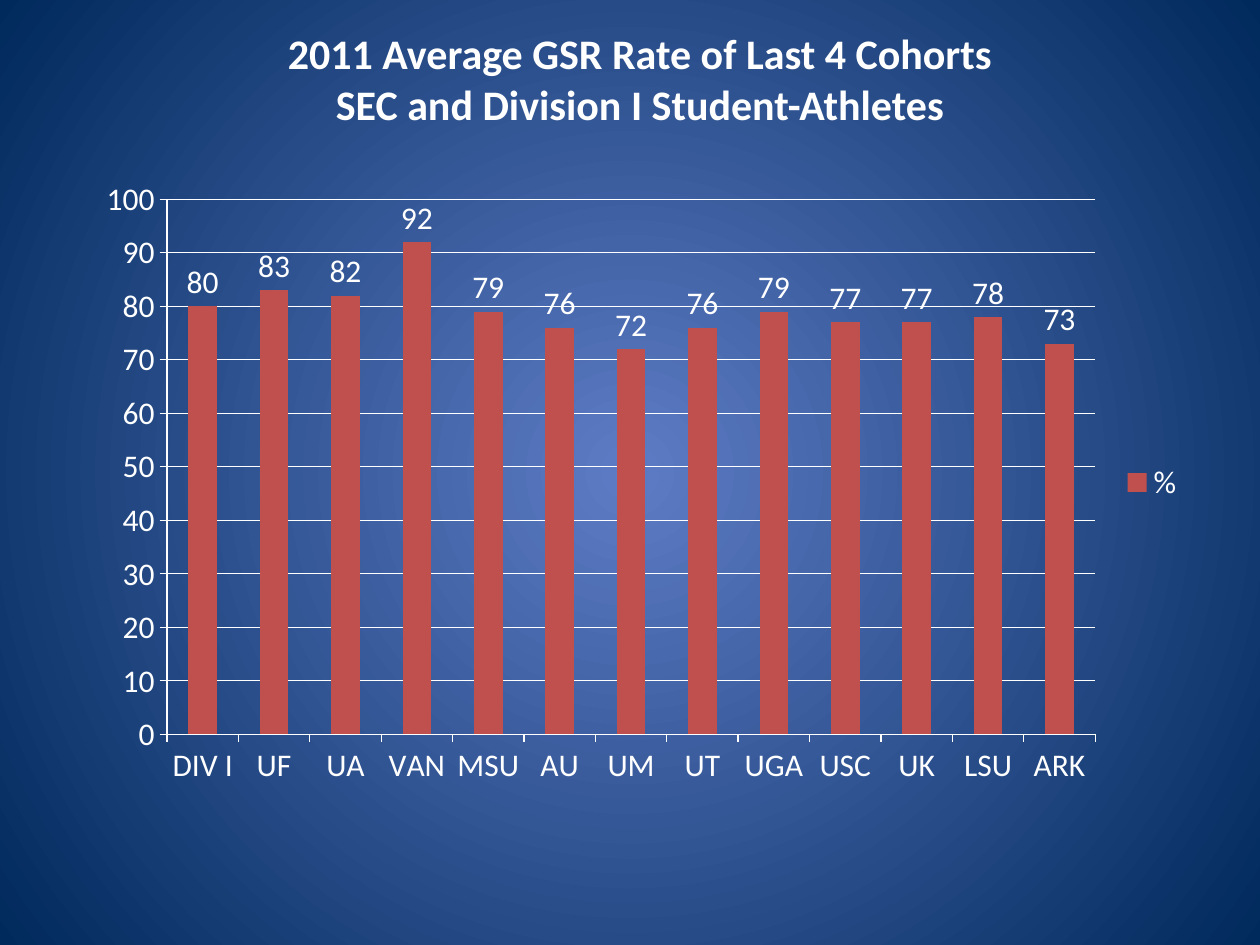
import pptx
import pptx.chart.data
import pptx.dml.color
import pptx.enum.chart
import pptx.enum.text
import pptx.oxml
import pptx.oxml.ns
import pptx.util
from pptx.util import Inches

RGBColor = pptx.dml.color.RGBColor
WHITE = RGBColor(0xFF, 0xFF, 0xFF)
BAR_RED = RGBColor(0xC0, 0x50, 0x4D)
GLOW_BLUE = RGBColor(0x5E, 0x7C, 0xC5)
DEEP_BLUE = RGBColor(0x00, 0x29, 0x5C)
FONT_NAME = "Calibri"

TITLE = "2011 Average GSR Rate of Last 4 Cohorts\vSEC and Division I Student-Athletes"
GSR_RATES = {
    "DIV I": 80, "UF": 83, "UA": 82, "VAN": 92, "MSU": 79, "AU": 76, "UM": 72,
    "UT": 76, "UGA": 79, "USC": 77, "UK": 77, "LSU": 78, "ARK": 73,
}


def style_font(font, size, bold=False):
    font.name = FONT_NAME
    font.size = pptx.util.Pt(size)
    font.bold = bold
    font.color.rgb = WHITE


def set_radial_background(slide, center_color, edge_color):
    fill = slide.background.fill
    fill.gradient()
    for stop, color in zip(fill.gradient_stops, (center_color, edge_color)):
        stop.color.rgb = color
    # Swap the linear direction for a circle around the slide centre
    gradient = slide.element.find(".//" + pptx.oxml.ns.qn("a:gradFill"))
    gradient.remove(gradient.find(pptx.oxml.ns.qn("a:lin")))
    gradient.append(pptx.oxml.parse_xml(
        f'<a:path {pptx.oxml.ns.nsdecls("a")} path="circle">'
        '<a:fillToRect l="50000" t="50000" r="50000" b="50000"/></a:path>'
    ))


def add_title(slide, text):
    text_box = slide.shapes.add_textbox(Inches(0.83), Inches(0.33), Inches(8.5), Inches(0.58))
    text_frame = text_box.text_frame
    text_frame.word_wrap = True
    text_frame.vertical_anchor = pptx.enum.text.MSO_ANCHOR.MIDDLE
    text_frame.text = text
    paragraph = text_frame.paragraphs[0]
    paragraph.alignment = pptx.enum.text.PP_ALIGN.CENTER
    for run in paragraph.runs:
        style_font(run.font, 24, bold=True)


def style_line(line):
    line.color.rgb = WHITE
    line.width = pptx.util.Pt(0.75)


def add_rate_chart(slide, rates):
    chart_data = pptx.chart.data.CategoryChartData()
    chart_data.categories = list(rates)
    chart_data.add_series("%", list(rates.values()))
    chart = slide.shapes.add_chart(
        pptx.enum.chart.XL_CHART_TYPE.COLUMN_CLUSTERED,
        Inches(0.67), Inches(1.33), Inches(8.83), Inches(5), chart_data,
    ).chart
    chart.has_title = False
    style_font(chart.font, 18)

    # Legend
    chart.has_legend = True
    chart.legend.position = pptx.enum.chart.XL_LEGEND_POSITION.RIGHT
    chart.legend.include_in_layout = False

    # Axes
    for axis in (chart.category_axis, chart.value_axis):
        axis.major_tick_mark = pptx.enum.chart.XL_TICK_MARK.OUTSIDE
        style_line(axis.format.line)
    value_axis = chart.value_axis
    value_axis.minimum_scale = 0
    value_axis.maximum_scale = 100
    value_axis.major_unit = 10
    value_axis.has_major_gridlines = True
    style_line(value_axis.major_gridlines.format.line)

    # Bars and their values
    plot = chart.plots[0]
    plot.vary_by_categories = False
    plot.gap_width = 150
    series = plot.series[0]
    series.format.fill.solid()
    series.format.fill.fore_color.rgb = BAR_RED
    labels = series.data_labels
    labels.show_value = True
    labels.position = pptx.enum.chart.XL_LABEL_POSITION.OUTSIDE_END
    style_font(labels.font, 18)


def main():
    presentation = pptx.Presentation()
    presentation.slide_width = Inches(10)
    presentation.slide_height = Inches(7.5)
    slide = presentation.slides.add_slide(presentation.slide_layouts[6])
    set_radial_background(slide, GLOW_BLUE, DEEP_BLUE)
    add_rate_chart(slide, GSR_RATES)
    add_title(slide, TITLE)
    presentation.save("out.pptx")


if __name__ == "__main__":
    main()
